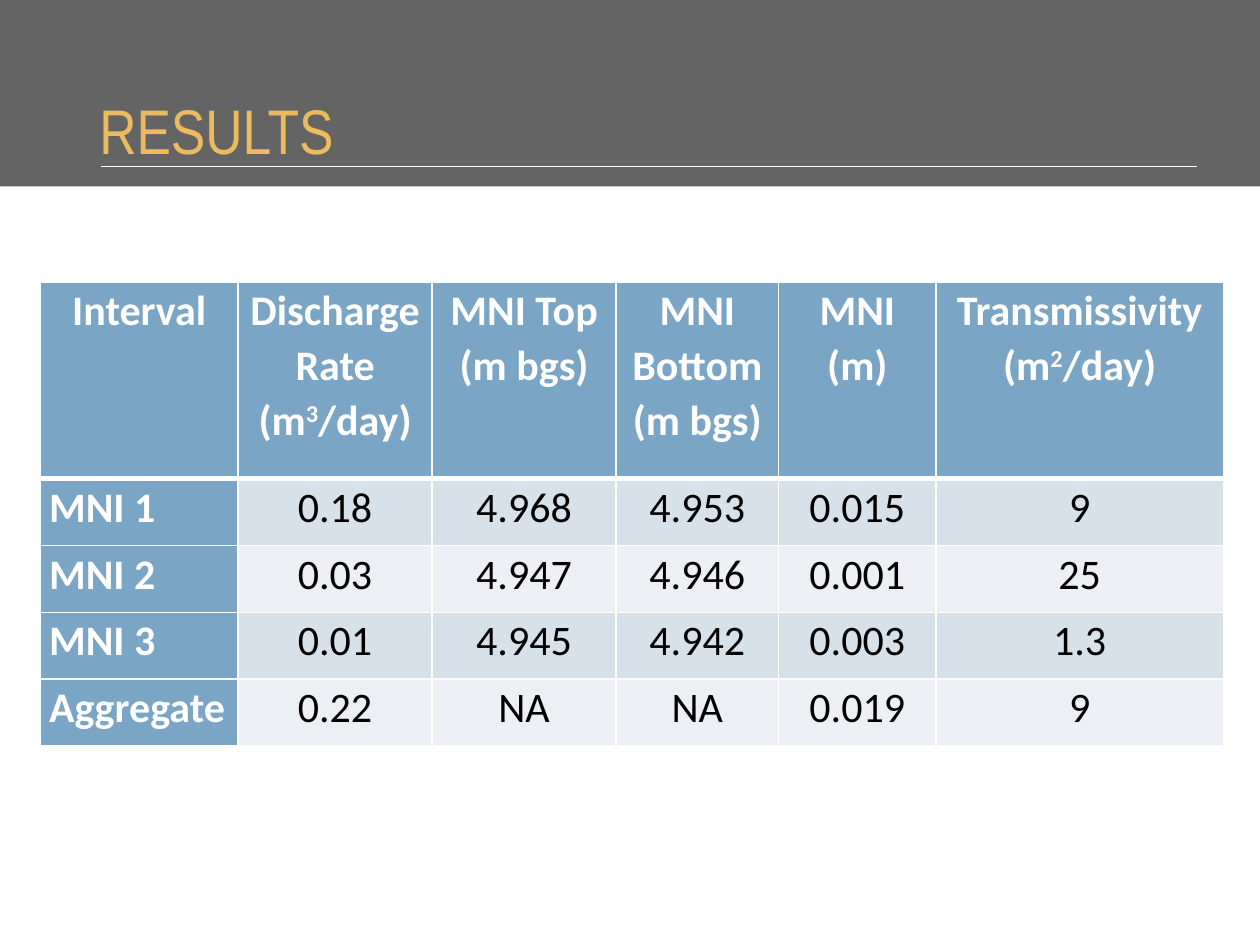
"""Build the results slide with its table of discharge and transmissivity."""
from lxml.etree import SubElement
from pptx import Presentation
from pptx.dml.color import RGBColor
from pptx.enum.shapes import MSO_CONNECTOR, MSO_SHAPE
from pptx.enum.text import MSO_ANCHOR, PP_ALIGN
from pptx.oxml.ns import qn
from pptx.util import Inches, Pt

WHITE = RGBColor(0xFF, 0xFF, 0xFF)
BLACK = RGBColor(0, 0, 0)
GRAY = RGBColor(0x65, 0x64, 0x65)
GOLD = RGBColor(0xEB, 0xBB, 0x5D)
BLUE = RGBColor(0x7A, 0xA5, 0xC5)
BANDS = [RGBColor(0xEC, 0xF0, 0xF5), RGBColor(0xD7, 0xE1, 0xEA)]

COLUMN_WIDTHS = [1.57, 1.54, 1.46, 1.29, 1.25, 2.28]
ROW_HEIGHTS = [1.56] + [0.53] * 4
RESULTS = [
    ["Interval", "Discharge Rate (m^3^/day)", "MNI Top\n(m bgs)",
     "MNI Bottom\n(m bgs)", "MNI\n(m)", "Transmissivity (m^2^/day)"],
    ["MNI 1", "0.18", "4.968", "4.953", "0.015", "9"],
    ["MNI 2", "0.03", "4.947", "4.946", "0.001", "25"],
    ["MNI 3", "0.01", "4.945", "4.942", "0.003", "1.3"],
    ["Aggregate", "0.22", "NA", "NA", "0.019", "9"],
]


def add_border(cell, side, points):
    border = SubElement(cell._tc.get_or_add_tcPr(), qn(f"a:{side}"), w=str(Pt(points)))
    fill = SubElement(border, qn("a:solidFill"))
    SubElement(fill, qn("a:srgbClr"), val=str(WHITE))


def write_line(paragraph, line, color, bold, align):
    paragraph.alignment = align
    paragraph.line_spacing = 1.07
    for part, piece in enumerate(line.split("^")):
        run = paragraph.add_run()
        run.text = piece
        run.font.name = "Calibri"
        run.font.size = Pt(24)
        run.font.bold = bold
        run.font.color.rgb = color
        if part % 2:
            run._r.get_or_add_rPr().set("baseline", "30000")


prs = Presentation()
prs.slide_width = Inches(10)
prs.slide_height = Inches(7.5)
slide = prs.slides.add_slide(prs.slide_layouts[6])

band = slide.shapes.add_shape(
    MSO_SHAPE.RECTANGLE, 0, Inches(-0.02), prs.slide_width, Inches(1.5))
band.shadow.inherit = False
band.fill.solid()
band.fill.fore_color.rgb = GRAY
band.line.fill.background()

rule = slide.shapes.add_connector(
    MSO_CONNECTOR.STRAIGHT, Inches(0.8), Inches(1.32), Inches(9.5), Inches(1.32))
rule.line.color.rgb = WHITE
rule.line.width = Pt(0.75)
SubElement(rule._element.spPr, qn("a:effectLst"))

title = slide.shapes.add_textbox(Inches(0.69), Inches(0.7), Inches(8.62), Inches(0.73))
title.text_frame.word_wrap = True
title.text_frame.vertical_anchor = MSO_ANCHOR.MIDDLE
title.text_frame.text = "RESULTS"
heading = title.text_frame.paragraphs[0]
heading.line_spacing = 0.9
heading.runs[0].font.name = "Arial Narrow"
heading.runs[0].font.size = Pt(36)
heading.runs[0].font.color.rgb = GOLD

table = slide.shapes.add_table(
    len(ROW_HEIGHTS), len(COLUMN_WIDTHS), Inches(0.32), Inches(2.24),
    Inches(sum(COLUMN_WIDTHS)), Inches(sum(ROW_HEIGHTS))).table
table.first_col = True
for column, width in zip(table.columns, COLUMN_WIDTHS):
    column.width = Inches(width)
for row, height in zip(table.rows, ROW_HEIGHTS):
    row.height = Inches(height)

for r, values in enumerate(RESULTS):
    for c, value in enumerate(values):
        cell = table.cell(r, c)
        label = r == 0 or c == 0
        cell.margin_left = cell.margin_right = Inches(0.07)
        cell.margin_top = cell.margin_bottom = 0
        for side, points in [("lnL", 1), ("lnR", 1), ("lnT", 3 if r == 1 else 1),
                             ("lnB", 3 if r == 0 else 1)]:
            add_border(cell, side, points)
        cell.fill.solid()
        cell.fill.fore_color.rgb = BLUE if label else BANDS[r % 2]
        align = PP_ALIGN.LEFT if r and c == 0 else PP_ALIGN.CENTER
        for n, line in enumerate(value.split("\n")):
            paragraph = cell.text_frame.add_paragraph() if n else cell.text_frame.paragraphs[0]
            write_line(paragraph, line, WHITE if label else BLACK, label, align)

prs.save("out.pptx")
